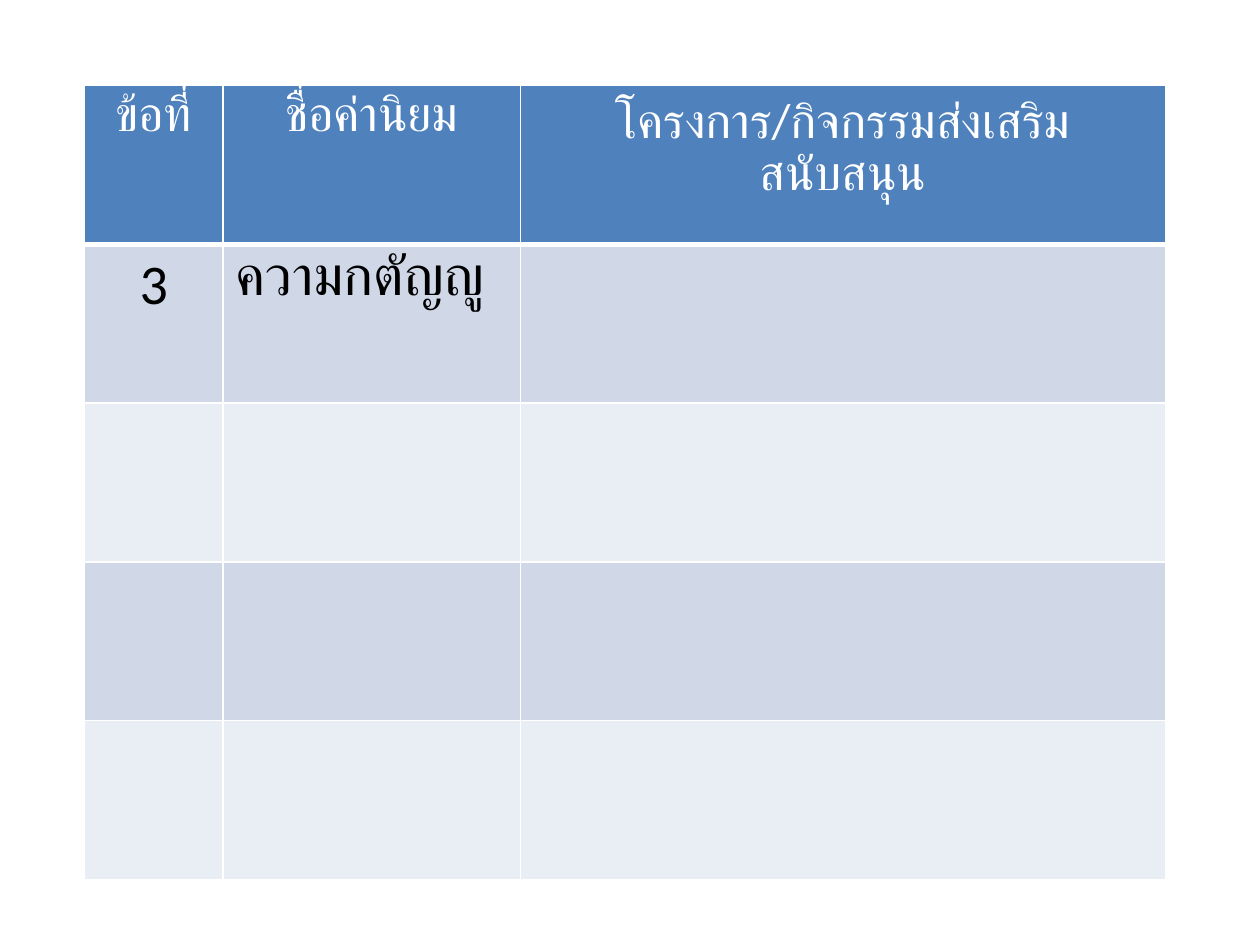
from dataclasses import dataclass

from lxml.etree import SubElement
from pptx import Presentation
from pptx.dml.color import RGBColor
from pptx.enum.text import PP_ALIGN
from pptx.oxml.ns import qn
from pptx.util import Inches, Pt


@dataclass(frozen=True)
class Theme:
    font: str = "Calibri"
    header_size: int = 28
    body_size: int = 32
    header_fill: str = "4F81BD"
    band_fills: tuple = ("D0D8E8", "E9EDF4")
    header_text: str = "FFFFFF"
    body_text: str = "000000"
    border: str = "FFFFFF"
    border_width: int = 1
    header_rule_width: int = 3


class SlideBuilder:
    """Draws styled elements on one slide."""

    def __init__(self, slide, theme):
        self.slide = slide
        self.theme = theme

    def add_text(self, cell, text, alignment, size, color):
        paragraph = cell.text_frame.paragraphs[0]
        paragraph.alignment = alignment
        run = paragraph.add_run()
        run.text = text
        run.font.name = self.theme.font
        run.font.size = Pt(size)
        run.font.bold = False
        run.font.color.rgb = RGBColor.from_string(color)

    def style_cell(self, cell, fill, bottom_width):
        properties = cell._tc.get_or_add_tcPr()
        for side in ("L", "R", "T", "B"):
            width = bottom_width if side == "B" else self.theme.border_width
            line = SubElement(properties, qn(f"a:ln{side}"), w=str(Pt(width)))
            solid = SubElement(line, qn("a:solidFill"))
            SubElement(solid, qn("a:srgbClr"), val=self.theme.border)
        cell.fill.solid()
        cell.fill.fore_color.rgb = RGBColor.from_string(fill)

    def add_table(self, left, top, column_widths, row_height, rows, body_alignments):
        theme = self.theme
        table = self.slide.shapes.add_table(
            len(rows), len(column_widths), Inches(left), Inches(top),
            Inches(sum(column_widths)), Inches(row_height * len(rows)),
        ).table
        for column, width in zip(table.columns, column_widths):
            column.width = Inches(width)
        for row_index, texts in enumerate(rows):
            table.rows[row_index].height = Inches(row_height)
            is_header = row_index == 0
            fill = theme.header_fill if is_header else theme.band_fills[(row_index - 1) % 2]
            bottom_width = theme.header_rule_width if is_header else theme.border_width
            size = theme.header_size if is_header else theme.body_size
            color = theme.header_text if is_header else theme.body_text
            for column_index, text in enumerate(texts):
                cell = table.cell(row_index, column_index)
                self.style_cell(cell, fill, bottom_width)
                if text:
                    alignment = PP_ALIGN.CENTER if is_header else body_alignments[column_index]
                    self.add_text(cell, text, alignment, size, color)


def main():
    presentation = Presentation()
    presentation.slide_width = Inches(10)
    presentation.slide_height = Inches(7.5)
    slide = presentation.slides.add_slide(presentation.slide_layouts[6])
    headers = ("ข้อที่", "ชื่อค่านิยม", "โครงการ/กิจกรรมส่งเสริมสนับสนุน")
    empty_row = ("",) * len(headers)
    rows = [headers, ("3", "ความกตัญญู", ""), *[empty_row] * 3]
    SlideBuilder(slide, Theme()).add_table(
        0.67, 0.68, (1.1, 2.36, 5.12), 1.26, rows,
        (PP_ALIGN.CENTER, PP_ALIGN.LEFT, PP_ALIGN.LEFT),
    )
    presentation.save("out.pptx")


if __name__ == "__main__":
    main()
